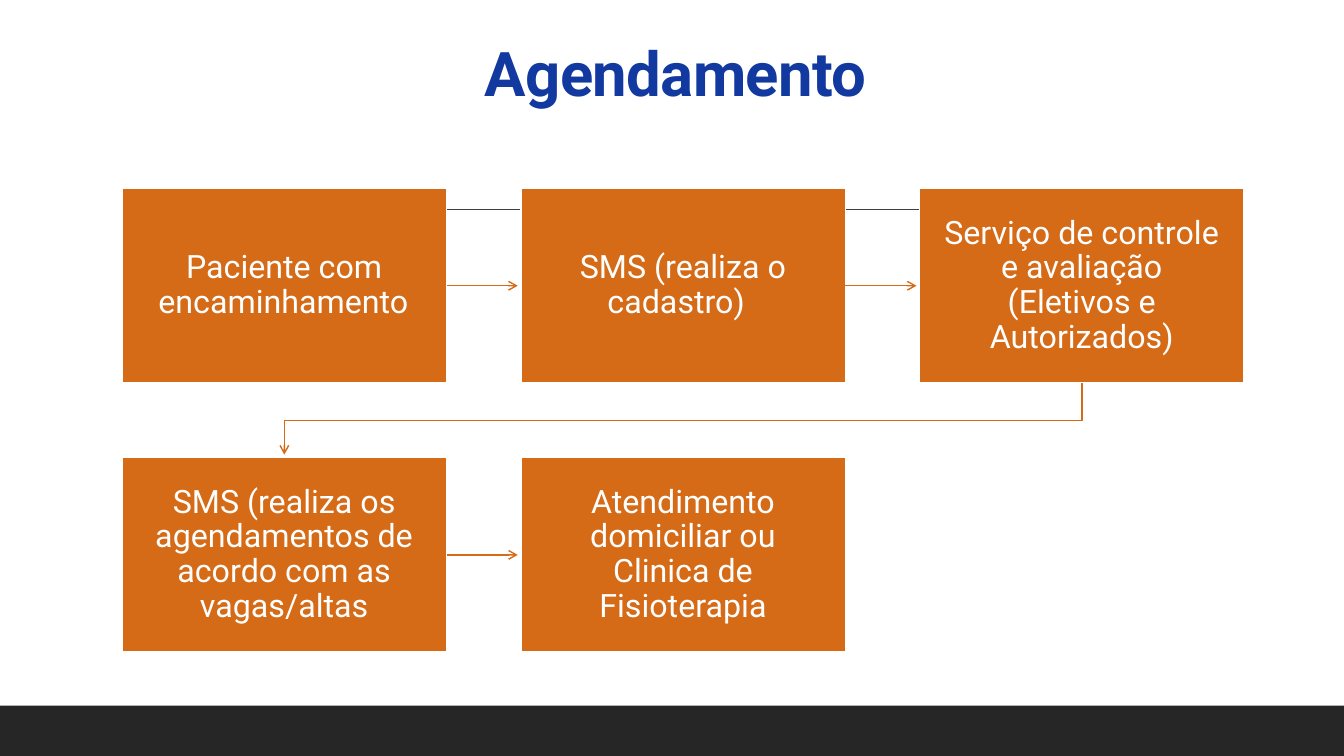
from pptx import Presentation
from pptx.dml.color import RGBColor
from pptx.enum.shapes import MSO_CONNECTOR as Connector, MSO_SHAPE as Shape
from pptx.enum.text import MSO_ANCHOR as Anchor, MSO_AUTO_SIZE as AutoSize, PP_ALIGN as Align
from pptx.oxml.ns import qn
from pptx.util import Inches, Pt
from lxml.etree import SubElement

WIDTH, HEIGHT = 13.33, 7.5
LEFT, TOP = 1.21, 1.87
STEP_W, STEP_H = 3.22, 1.93
PITCH_X, PITCH_Y = 3.955, 2.67
COLUMNS = 3
ARROW_GAP = 0.03

STEPS = [
    "Paciente com encaminhamento\t",
    "SMS (realiza o cadastro)\t",
    "Serviço de controle e avaliação (Eletivos e Autorizados)",
    "SMS (realiza os agendamentos de acordo com as vagas/altas",
    "Atendimento domiciliar ou Clinica de Fisioterapia",
]


def color(value):
    return RGBColor.from_string(value)


class FlowSlide:
    """Draws the parts of a step flow on one slide in a shared style."""

    font = "Roboto"
    accent, title_color, dark, rule_color, white = "D56A17", "1139A0", "262626", "404040", "FFFFFF"

    def __init__(self, slide):
        self.slide = slide
        self.shapes = slide.shapes

    def style_text(self, paragraph, size, hex_color, bold=False):
        paragraph.alignment = Align.CENTER
        paragraph.line_spacing = 0.9
        font = paragraph.font
        font.name, font.size, font.bold = self.font, Pt(size), bold
        font.color.rgb = color(hex_color)

    def title(self, text, left, top, width, height):
        heading = self.shapes.title
        heading.left, heading.top = Inches(left), Inches(top)
        heading.width, heading.height = Inches(width), Inches(height)
        frame = heading.text_frame
        frame.text = text
        frame.word_wrap = True
        frame.auto_size = AutoSize.NONE
        frame.vertical_anchor = Anchor.BOTTOM
        paragraph = frame.paragraphs[0]
        self.style_text(paragraph, 44, self.title_color, bold=True)
        paragraph.runs[0]._r.get_or_add_rPr().set("spc", "-50")

    def rect(self, left, top, width, height, fill):
        box = self.shapes.add_shape(
            Shape.RECTANGLE, Inches(left), Inches(top), Inches(width), Inches(height))
        box.shadow.inherit = False
        box.fill.solid()
        box.fill.fore_color.rgb = color(fill)
        box.line.fill.background()
        return box

    def step(self, text, left, top):
        box = self.rect(left, top, STEP_W, STEP_H, self.accent)
        box.line.color.rgb = color(self.white)
        box.line.width = Pt(1.25)
        frame = box.text_frame
        frame.word_wrap = True
        frame.vertical_anchor = Anchor.MIDDLE
        frame.margin_left = frame.margin_right = Inches(0.18)
        frame.margin_top = frame.margin_bottom = Inches(0.18)
        frame.text = text
        self.style_text(frame.paragraphs[0], 23, self.white)

    def style_line(self, line, hex_color, arrow):
        line.color.rgb = color(hex_color)
        line.width = Pt(1)
        if arrow:
            SubElement(line._get_or_add_ln(), qn("a:tailEnd"), type="arrow")

    def line(self, start, end, hex_color, arrow=False):
        x1, y1, x2, y2 = (Inches(value) for value in (*start, *end))
        connector = self.shapes.add_connector(Connector.STRAIGHT, x1, y1, x2, y2)
        self.style_line(connector.line, hex_color, arrow)
        SubElement(connector._element.spPr, qn("a:effectLst"))

    def bent_arrow(self, points):
        start, *rest = [(Inches(x), Inches(y)) for x, y in points]
        builder = self.shapes.build_freeform(*start)
        builder.add_line_segments(rest, close=False)
        route = builder.convert_to_shape()
        route.shadow.inherit = False
        route.fill.background()
        self.style_line(route.line, self.accent, arrow=True)


def main():
    deck = Presentation()
    deck.slide_width, deck.slide_height = Inches(WIDTH), Inches(HEIGHT)
    flow = FlowSlide(deck.slides.add_slide(deck.slide_layouts[5]))

    flow.rect(0, 7, WIDTH, 0.5, flow.dark)
    flow.line((1.31, 2.08), (12.21, 2.08), flow.rule_color)
    flow.title("Agendamento", 1.2, 0.31, 11, 0.83)

    for index, text in enumerate(STEPS):
        row, column = divmod(index, COLUMNS)
        left, top = LEFT + column * PITCH_X, TOP + row * PITCH_Y
        right, bottom = left + STEP_W, top + STEP_H
        flow.step(text, left, top)
        if index == len(STEPS) - 1:
            continue
        if column < COLUMNS - 1:
            middle = top + STEP_H / 2
            flow.line((right, middle), (left + PITCH_X - ARROW_GAP, middle), flow.accent, arrow=True)
        else:
            next_top = top + PITCH_Y
            turn = (bottom + next_top) / 2
            start_x, end_x = left + STEP_W / 2, LEFT + STEP_W / 2
            flow.bent_arrow([(start_x, bottom), (start_x, turn),
                             (end_x, turn), (end_x, next_top - ARROW_GAP)])

    deck.save("out.pptx")


if __name__ == "__main__":
    main()
